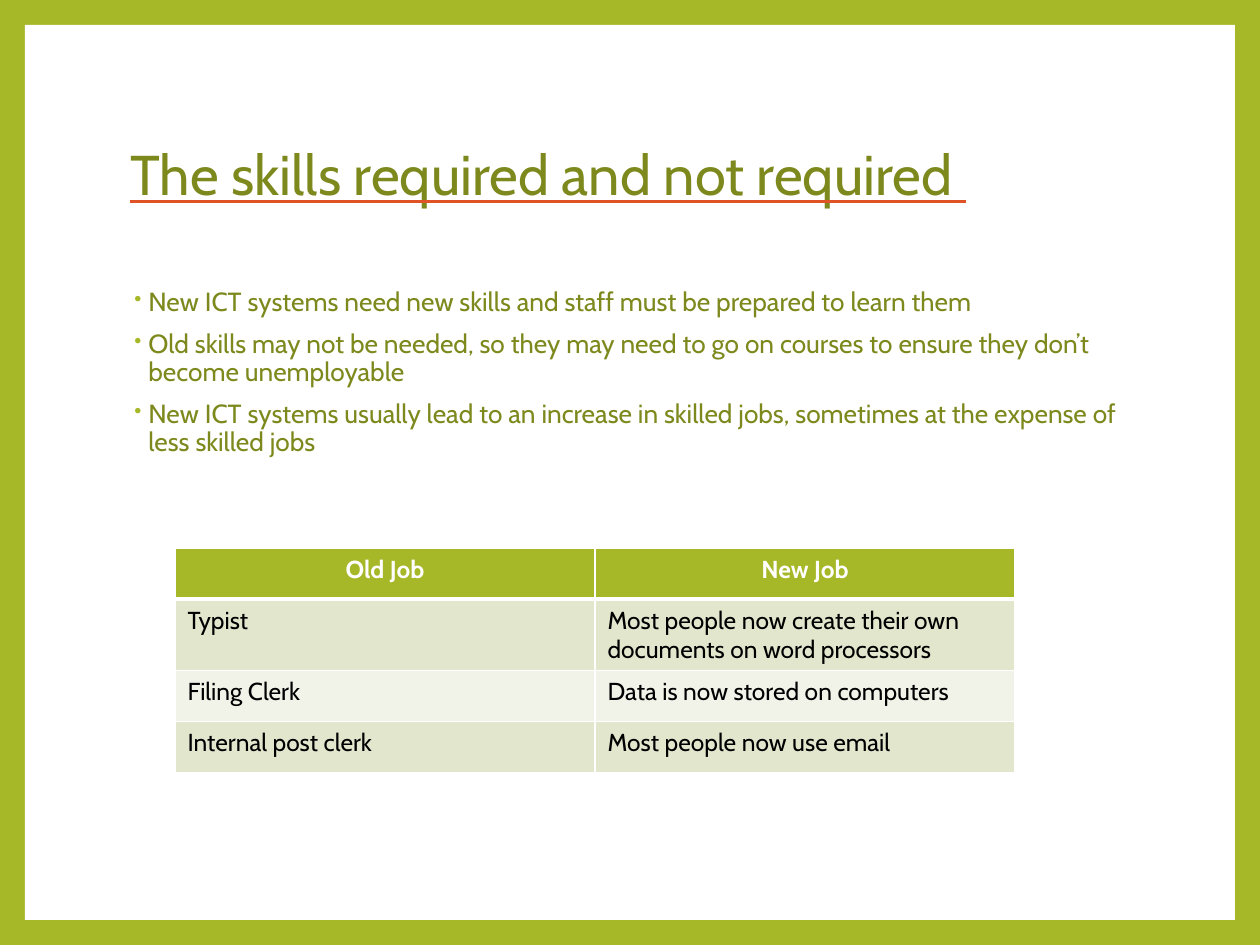
from lxml import etree
from pptx import Presentation
from pptx.dml.color import RGBColor
from pptx.enum.shapes import MSO_SHAPE
from pptx.enum.text import MSO_ANCHOR, PP_ALIGN
from pptx.oxml.ns import qn
from pptx.util import Pt

TITLE = "The skills required and not required\u00a0".replace("\u00a0", " ")
BULLETS = [
    "New ICT systems need new skills and staff must be prepared to learn them",
    "Old skills may not be needed, so they may need to go on courses to ensure they don’t become unemployable",
    "New ICT systems usually lead to an increase in skilled jobs, sometimes at the expense of less skilled jobs",
]
JOBS = [
    ("Old Job", "New Job"),
    ("Typist", "Most people now create their own documents on word processors"),
    ("Filing Clerk", "Data is now stored on computers"),
    ("Internal post clerk", "Most people now use email"),
]

FONT = "Cabin"
LIME = RGBColor(0xA6, 0xB7, 0x27)
OLIVE = RGBColor(0x7D, 0x89, 0x1D)
ORANGE = RGBColor(0xDF, 0x53, 0x27)
WHITE = RGBColor(0xFF, 0xFF, 0xFF)
BLACK = RGBColor(0, 0, 0)
BAND_DARK = RGBColor(0xE1, 0xE6, 0xCD)
BAND_LIGHT = RGBColor(0xF1, 0xF3, 0xE8)
RECTANGLE = MSO_SHAPE.RECTANGLE
MIDDLE, TOP = MSO_ANCHOR.MIDDLE, MSO_ANCHOR.TOP
LEFT, CENTER = PP_ALIGN.LEFT, PP_ALIGN.CENTER

SLIDE_WIDTH, SLIDE_HEIGHT, FRAME = 1260, 945, 25
TEXT_LEFT, TEXT_WIDTH = 118, 1021
TABLE_LEFT, TABLE_TOP, COLUMN_WIDTH, ROW_HEIGHT = 175, 548, 420, 51


def px(value):
    return round(value * 914400 / 126)


def add_solid(parent, color):
    fill = etree.SubElement(parent, qn("a:solidFill"))
    etree.SubElement(fill, qn("a:srgbClr"), val=str(color))


def add_bullet(para):
    properties = para._p.get_or_add_pPr()
    properties.set("marL", str(px(18)))
    properties.set("indent", str(px(-14)))
    color = etree.SubElement(properties, qn("a:buClr"))
    etree.SubElement(color, qn("a:srgbClr"), val=str(LIME))
    etree.SubElement(properties, qn("a:buSzPct"), val="80000")
    etree.SubElement(properties, qn("a:buChar"), char="•")


def write_text(frame, texts, size, color, bold=False, align=LEFT, anchor=TOP,
               spacing=1.0, before=0, bullet=False, underline=None):
    frame.word_wrap = True
    frame.vertical_anchor = anchor
    for index, text in enumerate(texts):
        para = frame.add_paragraph() if index else frame.paragraphs[0]
        para.alignment = align
        para.line_spacing = spacing
        if index:
            para.space_before = Pt(before)
        if bullet:
            add_bullet(para)
        span = para.add_run()
        span.text = text
        font = span.font
        font.size, font.bold = Pt(size), bold
        font.color.rgb = color
        if underline is not None:
            font.underline = True
            add_solid(etree.SubElement(font._element, qn("a:uFill")), underline)
        font.name = FONT


def add_text_box(slide, top, height, texts, **style):
    box = slide.shapes.add_textbox(px(TEXT_LEFT), px(top), px(TEXT_WIDTH), px(height))
    write_text(box.text_frame, texts, **style)


def set_borders(cell, **widths):
    properties = cell._tc.get_or_add_tcPr()
    for side in "LRTB":
        line = etree.SubElement(properties, qn("a:ln" + side), w=str(Pt(widths.get(side, 1))))
        add_solid(line, WHITE)


def add_job_table(slide):
    columns = len(JOBS[0])
    table = slide.shapes.add_table(
        len(JOBS), columns, px(TABLE_LEFT), px(TABLE_TOP),
        px(COLUMN_WIDTH * columns), px(ROW_HEIGHT * len(JOBS))).table
    for row, texts in enumerate(JOBS):
        header = row == 0
        band = BAND_DARK if row % 2 else BAND_LIGHT
        for column, text in enumerate(texts):
            cell = table.cell(row, column)
            set_borders(cell, B=3 if header else 1, T=3 if row == 1 else 1)
            cell.fill.solid()
            cell.fill.fore_color.rgb = LIME if header else band
            write_text(cell.text_frame, [text], size=14, bold=header,
                       color=WHITE if header else BLACK,
                       align=CENTER if header else LEFT)


def main():
    deck = Presentation()
    deck.slide_width, deck.slide_height = px(SLIDE_WIDTH), px(SLIDE_HEIGHT)
    slide = deck.slides.add_slide(deck.slide_layouts[6])
    slide.background.fill.solid()
    slide.background.fill.fore_color.rgb = LIME
    page = slide.shapes.add_shape(RECTANGLE, px(FRAME), px(FRAME),
                                  px(SLIDE_WIDTH - 2 * FRAME), px(SLIDE_HEIGHT - 2 * FRAME))
    page.shadow.inherit = False
    page.fill.solid()
    page.fill.fore_color.rgb = WHITE
    page.line.fill.background()
    add_text_box(slide, 84, 187, [TITLE], size=32, color=OLIVE, anchor=MIDDLE,
                 spacing=0.9, underline=ORANGE)
    add_text_box(slide, 283, 557, BULLETS, size=15, color=OLIVE, spacing=0.9,
                 before=7.5, bullet=True)
    add_job_table(slide)
    deck.save("out.pptx")


if __name__ == "__main__":
    main()
